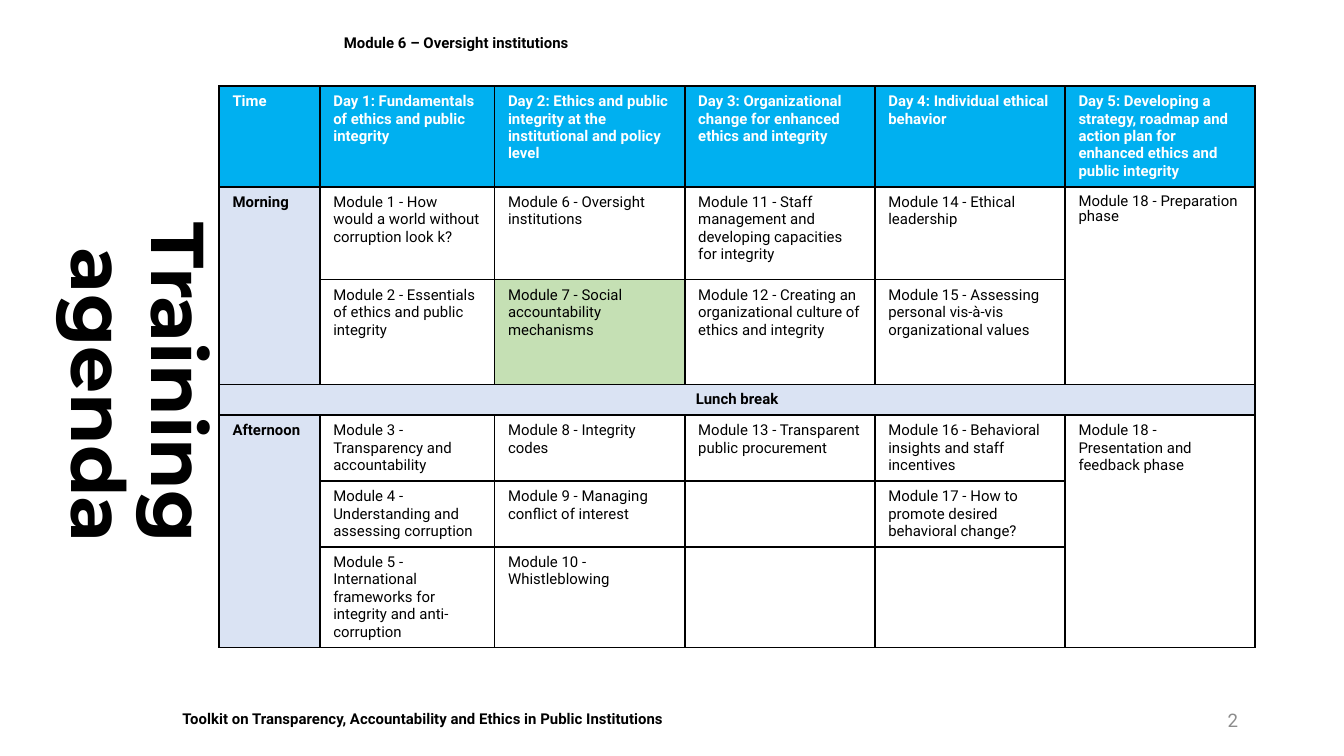
"""Build the training agenda slide with its five-day module table."""
from lxml.etree import SubElement
from pptx import Presentation
from pptx.dml.color import RGBColor
from pptx.enum.text import MSO_ANCHOR, PP_ALIGN
from pptx.oxml.ns import qn
from pptx.util import Inches, Pt

BLACK = RGBColor(0x00, 0x00, 0x00)
WHITE = RGBColor(0xFF, 0xFF, 0xFF)
GREY = RGBColor(0x8C, 0x8C, 0x8C)
BLUE = RGBColor(0x00, 0xB0, 0xF0)
PALE_BLUE = RGBColor(0xDA, 0xE3, 0xF3)
GREEN = RGBColor(0xC5, 0xE0, 0xB4)


def write(frame, text, size=8, color=BLACK, bold=False, align=PP_ALIGN.LEFT, font="Roboto"):
    paragraph = frame.paragraphs[0]
    paragraph.text = text
    paragraph.alignment = align
    formats = {"name": font, "size": Pt(size), "bold": bold}
    for attribute, value in formats.items():
        setattr(paragraph.font, attribute, value)
    paragraph.font.color.rgb = color


def add_label(box, text, **formats):
    label = slide.shapes.add_textbox(*map(Inches, box))
    label.text_frame.word_wrap = True
    label.text_frame.vertical_anchor = MSO_ANCHOR.MIDDLE
    write(label.text_frame, text, **formats)
    return label


prs = Presentation()
prs.slide_width = Inches(10)
prs.slide_height = prs.slide_width * 9 // 16
slide = prs.slides.add_slide(prs.slide_layouts[6])

footer = add_label((1.26, 5.23, 7.17, 0.24),
                   "Toolkit on Transparency, Accountability and Ethics in Public Institutions", bold=True)
footer.fill.solid()
footer.fill.fore_color.rgb = WHITE

title = add_label((0.28, 0.64, 1.35, 4.43), "Training agenda",
                  size=40, bold=True, align=PP_ALIGN.RIGHT, font="Montserrat")
title.text_frame.paragraphs[0].line_spacing = 0.9
title.text_frame.margin_bottom = Inches(1.03)
title.text_frame.margin_left = Inches(0.16)
title.element.txBody.bodyPr.set("vert", "vert")

add_label((2.46, 0.1, 6.85, 0.44), "Module 6 – Oversight institutions", bold=True)

agenda = [
    ["Time", "Day 1: Fundamentals of ethics and public integrity",
     "Day 2: Ethics and public integrity at the institutional and policy level",
     "Day 3: Organizational change for enhanced ethics and integrity",
     "Day 4: Individual ethical behavior",
     "Day 5: Developing a strategy, roadmap and action plan for enhanced ethics and public integrity"],
    ["Morning", "Module 1 - How would a world without corruption look k?",
     "Module 6 - Oversight institutions",
     "Module 11 - Staff management and developing capacities for integrity",
     "Module 14 - Ethical leadership", "Module 18 - Preparation phase"],
    ["", "Module 2 - Essentials of ethics and public integrity",
     "Module 7 - Social accountability mechanisms",
     "Module 12 - Creating an organizational culture of ethics and integrity",
     "Module 15 - Assessing personal vis-à-vis organizational values", ""],
    ["Lunch break", "", "", "", "", ""],
    ["Afternoon", "Module 3 - Transparency and accountability", "Module 8 - Integrity codes",
     "Module 13 - Transparent public procurement",
     "Module 16 - Behavioral insights and staff incentives",
     "Module 18 - Presentation and feedback phase"],
    ["", "Module 4 - Understanding and assessing corruption",
     "Module 9 - Managing conflict of interest", "",
     "Module 17 - How to promote desired behavioral change?", ""],
    ["", "Module 5 - International frameworks for integrity and anti-corruption",
     "Module 10 - Whistleblowing", "", "", ""],
]
table_width = 7.71
column_widths = [0.75, 1.3] + [(table_width - 0.75 - 1.3) / 4] * 4
row_heights = [0.75, 0.69, 0.78, 0.23, 0.49, 0.49, 0.75]
schedule = slide.shapes.add_table(
    len(row_heights), len(column_widths), Inches(1.63), Inches(0.64),
    Inches(table_width), Inches(sum(row_heights))).table
for column, width in zip(schedule.columns, column_widths):
    column.width = Inches(width)
for row, height in zip(schedule.rows, row_heights):
    row.height = Inches(height)

for r, entries in enumerate(agenda):
    for c, entry in enumerate(entries):
        cell = schedule.cell(r, c)
        cell.margin_bottom = Inches(0.03)
        heading = r == 0 or c == 0
        write(cell.text_frame, entry, color=WHITE if r == 0 else BLACK, bold=heading,
              align=PP_ALIGN.CENTER if entry == "Lunch break" else PP_ALIGN.LEFT)
        properties = cell._tc.get_or_add_tcPr()
        for side in ("lnL", "lnR", "lnT", "lnB"):
            border = SubElement(properties, qn(f"a:{side}"), w=str(Pt(1)))
            ink = SubElement(border, qn("a:solidFill"))
            SubElement(ink, qn("a:srgbClr"), val=str(BLACK))
        if heading or r == 3 or (r, c) == (2, 2):
            cell.fill.solid()
            cell.fill.fore_color.rgb = (
                BLUE if r == 0 else GREEN if (r, c) == (2, 2) else PALE_BLUE)
        else:
            cell.fill.background()

schedule.cell(1, 5).text_frame.paragraphs[0].line_spacing = 0.9
for first, last in [((1, 0), (2, 0)), ((1, 5), (2, 5)), ((3, 0), (3, 5)),
                    ((4, 0), (6, 0)), ((4, 5), (6, 5))]:
    schedule.cell(*first).merge(schedule.cell(*last))

add_label((7.06, 5.21, 2.25, 0.3), "2", size=10, color=GREY, align=PP_ALIGN.RIGHT)

prs.save("out.pptx")
